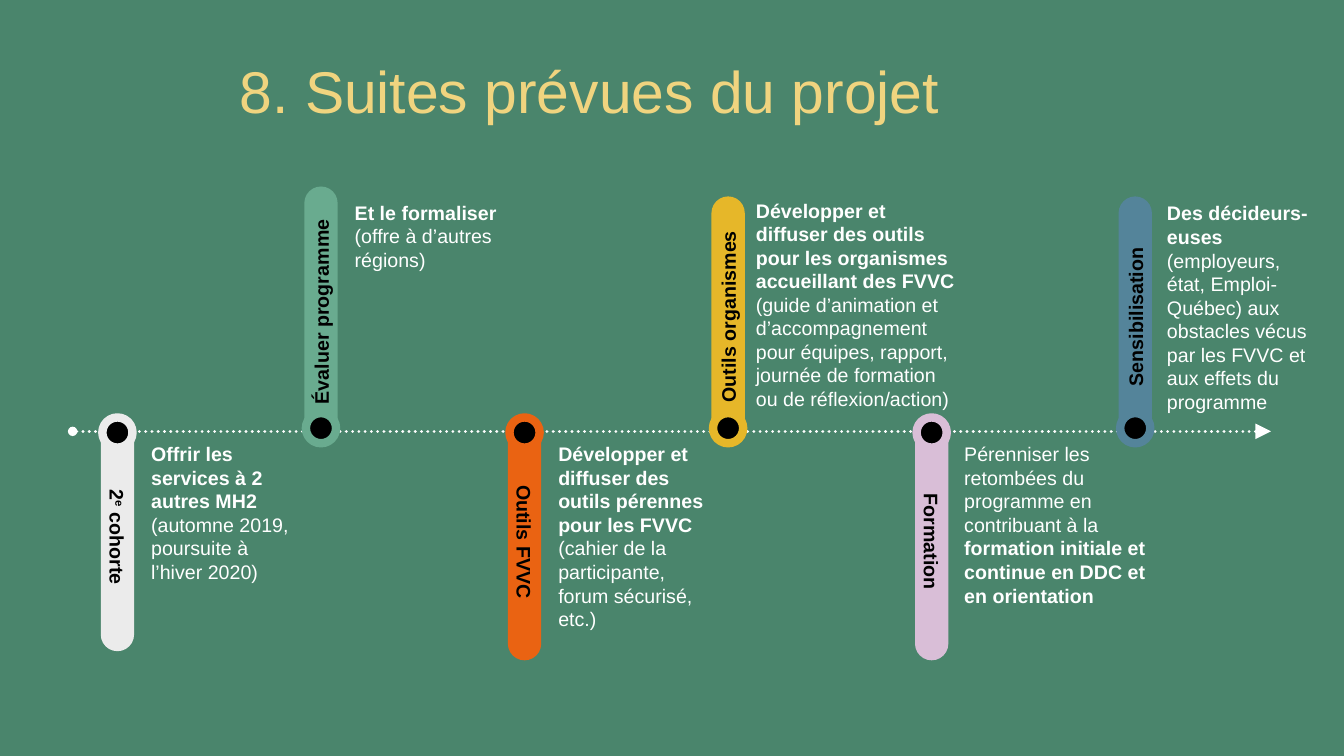
from lxml.etree import SubElement
from pptx import Presentation
from pptx.dml.color import RGBColor
from pptx.enum.dml import MSO_LINE
from pptx.enum.shapes import MSO_CONNECTOR, MSO_SHAPE
from pptx.enum.text import MSO_ANCHOR, MSO_AUTO_SIZE, PP_ALIGN
from pptx.oxml.ns import qn
from pptx.util import Cm, Pt

GREEN = RGBColor(0x4A, 0x85, 0x6C)
GOLD = RGBColor(0xF0, 0xD4, 0x7F)
WHITE = RGBColor(0xFF, 0xFF, 0xFF)
BLACK = RGBColor(0x00, 0x00, 0x00)
GREY = RGBColor(0xEB, 0xEB, 0xEB)
MINT = RGBColor(0x69, 0xAB, 0x8F)
ORANGE = RGBColor(0xEA, 0x63, 0x12)
YELLOW = RGBColor(0xE6, 0xB7, 0x29)
PINK = RGBColor(0xD9, 0xBE, 0xD7)
BLUE = RGBColor(0x54, 0x84, 0x9A)

FIRST_LEFT, PITCH = 2.54, 5.13
BAR_WIDTH, DOT_SIZE = 0.84, 0.76
AXIS_TOP = 10.87
LOWER_BAR_TOP, UPPER_BAR_BOTTOM = 10.67, 11.02
LOWER_DOT_TOP, UPPER_DOT_TOP = 10.52, 10.41

STEPS = [
    (["2", "e", " cohorte"], GREY, 5.74, (3.56, 11.02, 4.14, 4.34),
     [[("Offrir les services à 2 autres MH2", True)],
      [("(automne 2019, poursuite à l’hiver 2020)", False)]]),
    (["Évaluer programme"], MINT, 6.32, (8.69, 4.93, 4.14, 3.76),
     [[("Et le formaliser ", True), ("(offre à d’autres régions)", False)]]),
    (["Outils FVVC"], ORANGE, 5.97, (13.82, 11.02, 4.6, 5.26),
     [[("Développer et diffuser des outils pérennes pour les FVVC ", True),
       ("(cahier de la participante, forum sécurisé, etc.)", False)]]),
    (["Outils organismes"], YELLOW, 6.07, (18.8, 4.88, 5.64, 5.33),
     [[("Développer et diffuser des outils pour les organismes "
        "accueillant des FVVC ", True),
       ("(guide d’animation et d’accompagnement pour équipes, rapport, "
        "journée de formation ou de réflexion/action)", False)]]),
    (["Formation"], PINK, 5.97, (24.05, 11.02, 5.26, 4.34),
     [[("Pérenniser les retombées du programme en contribuant à la ", False),
       ("formation initiale et continue en DDC et en orientation", True)]]),
    (["Sensibilisation"], BLUE, 6.07, (29.16, 4.95, 4.14, 5.74),
     [[("Des décideurs-euses ", True),
       ("(employeurs, état, Emploi-Québec) aux obstacles vécus par les FVVC "
        "et aux effets du programme", False)]]),
]


def format_font(font, size, colour, bold=False):
    font.name = "Arial"
    font.size = Pt(size)
    font.bold = bold
    font.color.rgb = colour


def add_span(para, text, colour, bold):
    span = para.add_run()
    span.text = text
    format_font(span.font, 14, colour, bold)
    return span


def add_title(page, text):
    title = page.shapes.title
    title.left, title.top, title.width, title.height = (
        Cm(1.8), Cm(1.24), Cm(26.11), Cm(3.89))
    frame = title.text_frame
    frame.text = text
    frame.vertical_anchor = MSO_ANCHOR.TOP
    frame.margin_top = Cm(0.13)
    para = frame.paragraphs[0]
    para.alignment = PP_ALIGN.CENTER
    format_font(para.runs[0].font, 42, GOLD)


def add_axis(page):
    axis = page.shapes.add_connector(
        MSO_CONNECTOR.STRAIGHT, Cm(1.83), Cm(AXIS_TOP), Cm(32.03), Cm(AXIS_TOP))
    axis.line.color.rgb = WHITE
    axis.line.width = Pt(2.25)
    axis.line.dash_style = MSO_LINE.ROUND_DOT
    outline = axis.line._get_or_add_ln()
    outline.set("cap", "rnd")
    SubElement(outline, qn("a:headEnd"), type="oval")
    SubElement(outline, qn("a:tailEnd"), type="triangle", w="lg", len="lg")
    SubElement(axis._element.spPr, qn("a:effectLst"))


def add_bar(page, left, height, colour, label, is_upper):
    top = UPPER_BAR_BOTTOM - height if is_upper else LOWER_BAR_TOP
    bar = page.shapes.add_shape(
        MSO_SHAPE.ROUNDED_RECTANGLE, Cm(left), Cm(top), Cm(BAR_WIDTH), Cm(height))
    bar.adjustments[0] = 0.5
    bar.shadow.inherit = False
    bar.fill.solid()
    bar.fill.fore_color.rgb = colour
    bar.line.fill.background()
    frame = bar.text_frame
    frame.margin_left = frame.margin_right = 0
    frame.margin_top = frame.margin_bottom = 0
    frame.vertical_anchor = MSO_ANCHOR.MIDDLE
    frame._txBody.bodyPr.set("vert", "vert270" if is_upper else "vert")
    para = frame.paragraphs[0]
    para.alignment = PP_ALIGN.CENTER
    for text in label:
        span = add_span(para, text, BLACK, True)
        if text == "e":
            span._r.get_or_add_rPr().set("baseline", "30000")


def add_dot(page, left, colour, is_upper):
    top = UPPER_DOT_TOP if is_upper else LOWER_DOT_TOP
    inset = (BAR_WIDTH - DOT_SIZE) / 2
    dot = page.shapes.add_shape(
        MSO_SHAPE.OVAL, Cm(left + inset), Cm(top), Cm(DOT_SIZE), Cm(DOT_SIZE))
    dot.shadow.inherit = False
    dot.fill.solid()
    dot.fill.fore_color.rgb = BLACK
    dot.line.color.rgb = colour
    dot.line.width = Pt(6)


def add_note(page, place, paragraphs):
    box = page.shapes.add_textbox(*map(Cm, place))
    frame = box.text_frame
    frame.word_wrap = True
    frame.auto_size = MSO_AUTO_SIZE.NONE
    for index, spans in enumerate(paragraphs):
        para = frame.add_paragraph() if index else frame.paragraphs[0]
        for text, bold in spans:
            add_span(para, text, WHITE, bold)


def main():
    deck = Presentation()
    deck.slide_width, deck.slide_height = Cm(33.87), Cm(19.05)
    page = deck.slides.add_slide(deck.slide_layouts[5])
    page.background.fill.solid()
    page.background.fill.fore_color.rgb = GREEN
    add_title(page, "8. Suites prévues du projet")
    add_axis(page)
    for index, (label, colour, height, place, paragraphs) in enumerate(STEPS):
        left = FIRST_LEFT + index * PITCH
        is_upper = index % 2 == 1
        add_bar(page, left, height, colour, label, is_upper)
        add_dot(page, left, colour, is_upper)
        add_note(page, place, paragraphs)
    deck.save("out.pptx")


if __name__ == "__main__":
    main()
